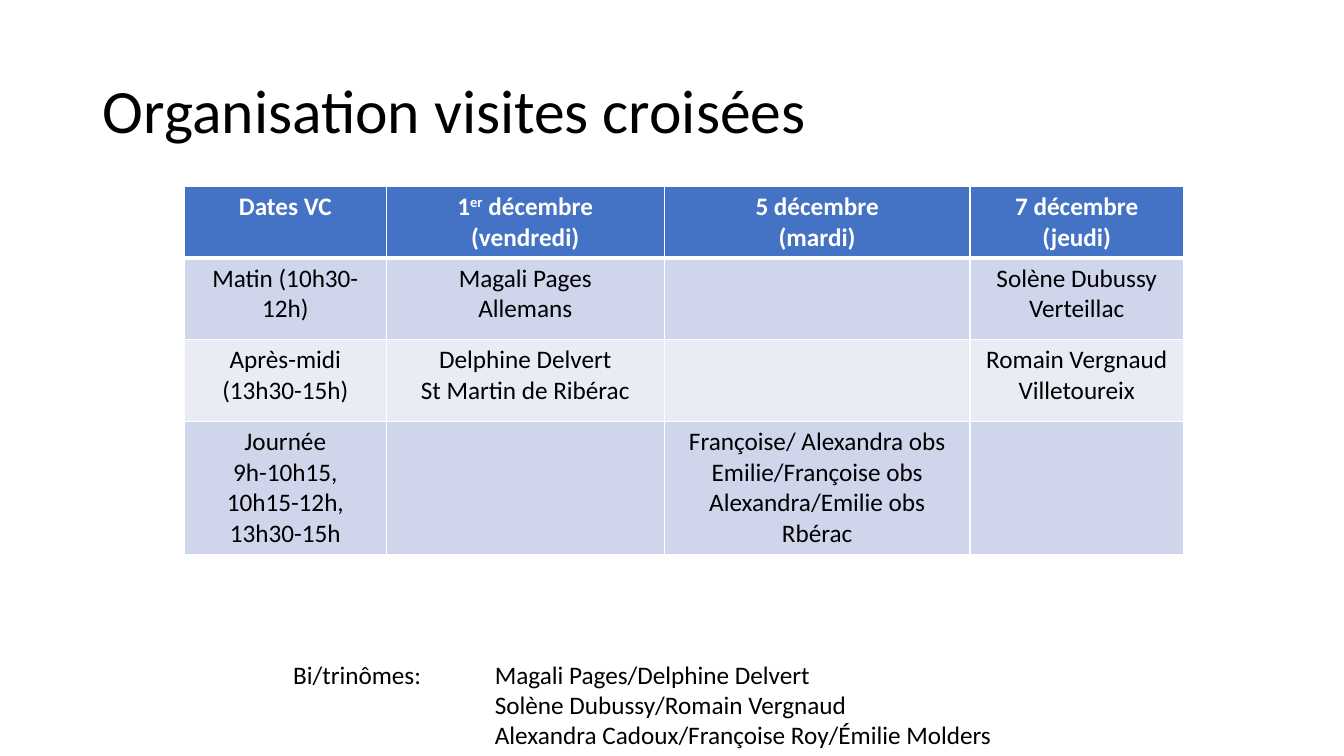
from lxml.etree import SubElement
from pptx import Presentation
from pptx.dml.color import RGBColor
from pptx.enum.text import MSO_ANCHOR as Anchor, MSO_AUTO_SIZE as AutoSize, PP_ALIGN as Align
from pptx.oxml.ns import qn
from pptx.util import Inches, Pt

FONT = "Calibri"
COLORS = {
    "ink": "000000",
    "paper": "FFFFFF",
    "header": "4472C4",
    "odd_row": "CFD5EA",
    "even_row": "E9EBF5",
}
COLUMN_WIDTHS = [2, 2.76, 3.03, 2.12]
ROW_HEIGHTS = [0.7, 0.81, 0.81, 1.32]
SCHEDULE = [
    ["Dates VC", "1^er^ décembre\n(vendredi)", "5 décembre\n(mardi)", "7 décembre\n(jeudi)"],
    ["Matin (10h30-12h)", "Magali Pages\nAllemans", "", "Solène Dubussy\nVerteillac"],
    ["Après-midi (13h30-15h)", "Delphine Delvert\nSt Martin de Ribérac", "",
     "Romain Vergnaud\nVilletoureix"],
    ["Journée\n9h-10h15, 10h15-12h, 13h30-15h", "",
     "Françoise/ Alexandra obs\nEmilie/Françoise obs\nAlexandra/Emilie obs\nRbérac", ""],
]
TEAMS = (
    "Bi/trinômes:\tMagali Pages/Delphine Delvert\n"
    "\tSolène Dubussy/Romain Vergnaud\n"
    "\tAlexandra Cadoux/Françoise Roy/Émilie Molders"
)


def rgb(name):
    return RGBColor.from_string(COLORS[name])


def write(frame, text, size=18, color="ink", bold=False, align=Align.LEFT,
          line_spacing=None, tab=None):
    for index, line in enumerate(text.split("\n")):
        paragraph = frame.paragraphs[0] if index == 0 else frame.add_paragraph()
        paragraph.alignment = align
        if line_spacing:
            paragraph.line_spacing = line_spacing
        if tab:
            tab_list = SubElement(paragraph._p.get_or_add_pPr(), qn("a:tabLst"))
            SubElement(tab_list, qn("a:tab"), pos=str(tab), algn="l")
        paragraph.font.size = Pt(size)
        for part, words in enumerate(line.split("^")):
            if not words:
                continue
            run = paragraph.add_run()
            run.text = words
            run.font.name = FONT
            run.font.size = Pt(size)
            run.font.bold = bold
            run.font.color.rgb = rgb(color)
            if part % 2:
                run._r.get_or_add_rPr().set("baseline", "30000")


def add_borders(cell, bottom_width):
    properties = cell._tc.get_or_add_tcPr()
    for side, width in (("L", 1), ("R", 1), ("T", 1), ("B", bottom_width)):
        border = SubElement(properties, qn(f"a:ln{side}"), w=str(Pt(width)))
        fill = SubElement(border, qn("a:solidFill"))
        SubElement(fill, qn("a:srgbClr"), val=COLORS["paper"])


def add_title(slide, left, top, width, height):
    title = slide.shapes.title
    title.left, title.top = Inches(left), Inches(top)
    title.width, title.height = Inches(width), Inches(height)
    title.text_frame.vertical_anchor = Anchor.MIDDLE
    title.text_frame.auto_size = AutoSize.NONE
    write(title.text_frame, "Organisation visites croisées", size=44, line_spacing=0.9)


def add_schedule(slide, left, top, width, height):
    schedule = slide.shapes.add_table(
        len(SCHEDULE), len(COLUMN_WIDTHS),
        Inches(left), Inches(top), Inches(width), Inches(height)).table
    for column, share in zip(schedule.columns, COLUMN_WIDTHS):
        column.width = Inches(width * share / sum(COLUMN_WIDTHS))
    for row, share in zip(schedule.rows, ROW_HEIGHTS):
        row.height = Inches(height * share / sum(ROW_HEIGHTS))
    for row_index, entries in enumerate(SCHEDULE):
        is_header = row_index == 0
        band = "header" if is_header else "odd_row" if row_index % 2 else "even_row"
        for column_index, entry in enumerate(entries):
            cell = schedule.cell(row_index, column_index)
            add_borders(cell, 3 if is_header else 1)
            cell.fill.solid()
            cell.fill.fore_color.rgb = rgb(band)
            write(cell.text_frame, entry, color="paper" if is_header else "ink",
                  bold=is_header, align=Align.CENTER)


def add_teams(slide, left, top, width, height):
    teams = slide.shapes.add_textbox(Inches(left), Inches(top), Inches(width), Inches(height))
    teams.text_frame.word_wrap = False
    teams.text_frame.auto_size = AutoSize.SHAPE_TO_FIT_TEXT
    write(teams.text_frame, TEAMS, tab=Inches(2))


def main():
    deck = Presentation()
    deck.slide_width, deck.slide_height = Inches(13.33), Inches(7.5)
    slide = deck.slides.add_slide(deck.slide_layouts[5])
    add_title(slide, 0.92, 0.4, 11.5, 1.45)
    add_schedule(slide, 1.83, 1.85, 9.91, 3.64)
    add_teams(slide, 2.81, 6.49, 7.2, 1.01)
    deck.save("out.pptx")


if __name__ == "__main__":
    main()
